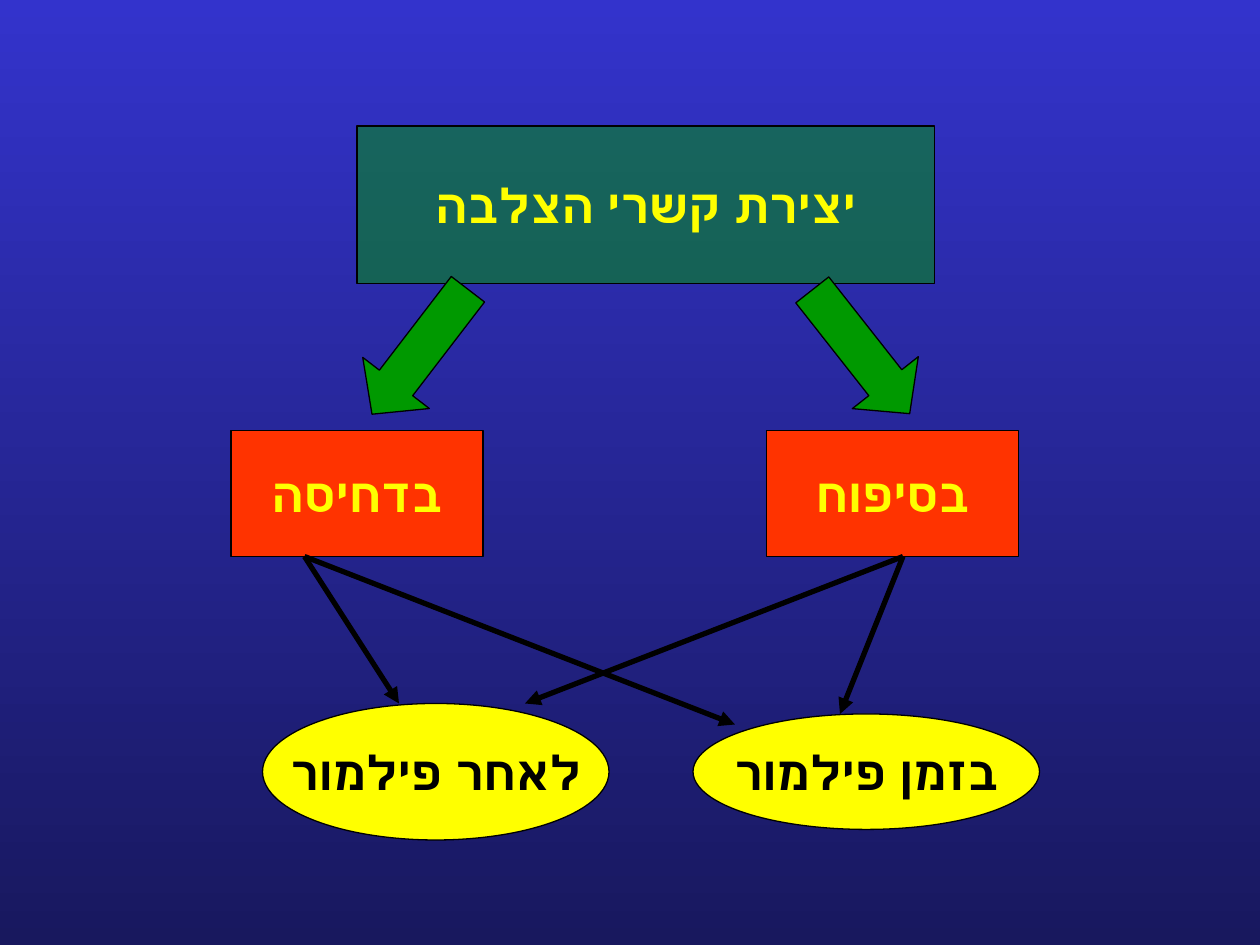
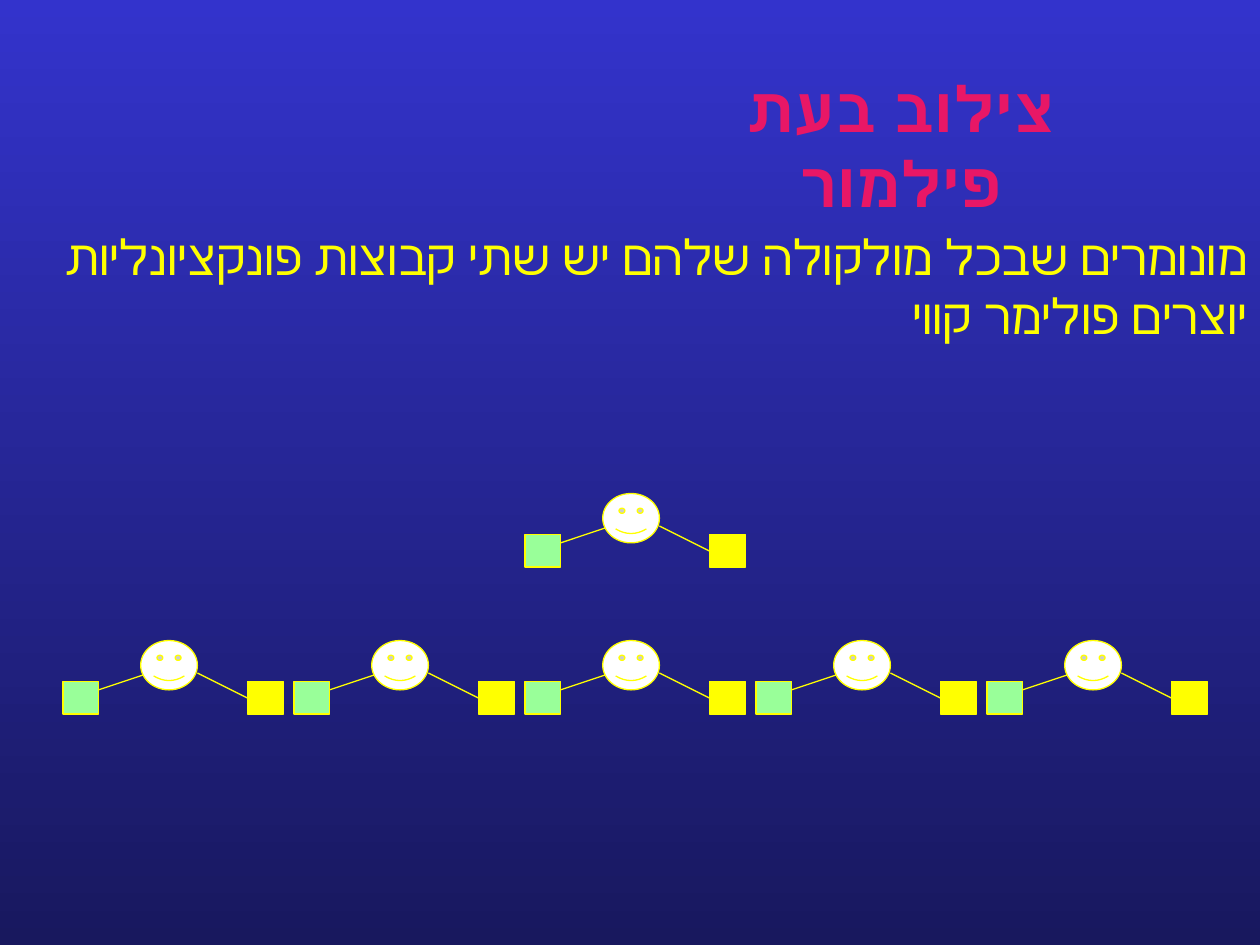
"""Build two slides on how cross-links form in polymers."""
from dataclasses import dataclass, field

from lxml.etree import SubElement
from pptx import Presentation
from pptx.dml.color import RGBColor
from pptx.enum.shapes import MSO_CONNECTOR, MSO_SHAPE
from pptx.enum.text import MSO_ANCHOR, PP_ALIGN
from pptx.oxml.ns import qn
from pptx.util import Pt

EMU_PER_PX = 7620


@dataclass(frozen=True)
class Theme:
    """Colours, type formats and line widths of the presentation."""

    sky: str = "3333CC"
    night: str = "18185E"
    black: str = "000000"
    white: str = "FFFFFF"
    yellow: str = "FFFF00"
    green: str = "009900"
    mint: str = "99FF99"
    red: str = "FF3300"
    pink: str = "E81766"
    thin: float = 0.75
    thick: float = 3
    label: dict = field(default_factory=lambda: {
        "name": "Times New Roman", "size": Pt(27), "bold": True})
    title: dict = field(default_factory=lambda: {
        "name": "Arial", "size": Pt(36), "bold": True})
    body: dict = field(default_factory=lambda: {
        "name": "Times New Roman", "size": Pt(28), "bold": False})


THEME = Theme()


def px(*lengths):
    """Turn px lengths into EMU."""
    return [length * EMU_PER_PX for length in lengths]


def add_slide(presentation):
    """Add a blank slide with the shared gradient background."""
    slide = presentation.slides.add_slide(presentation.slide_layouts[6])
    fill = slide.background.fill
    fill.gradient()
    fill.gradient_angle = 270
    for stop, color in zip(fill.gradient_stops, (THEME.sky, THEME.night)):
        stop.color.rgb = RGBColor.from_string(color)
    return slide


def write_text(shape, text, text_format, color, frame_format, alignment=PP_ALIGN.CENTER):
    """Write one right-to-left paragraph into a shape."""
    for name, value in frame_format.items():
        setattr(shape.text_frame, name, value)
    paragraph = shape.text_frame.paragraphs[0]
    paragraph.alignment = alignment
    paragraph._p.get_or_add_pPr().set("rtl", "1")
    run = paragraph.add_run()
    run.text = text
    for name, value in text_format.items():
        setattr(run.font, name, value)
    run.font.color.rgb = RGBColor.from_string(color)


def add_figure(shapes, preset, box, fill, outline):
    """Add a flat preset shape with a thin outline."""
    shape = shapes.add_shape(preset, *px(*box))
    shape.shadow.inherit = False
    shape.fill.solid()
    shape.fill.fore_color.rgb = RGBColor.from_string(fill)
    shape.line.color.rgb = RGBColor.from_string(outline)
    shape.line.width = Pt(THEME.thin)
    return shape


def add_node(slide, preset, box, text, fill, color):
    """Add a labelled diagram node."""
    shape = add_figure(slide.shapes, preset, box, fill, THEME.black)
    frame_format = {"word_wrap": False, "vertical_anchor": MSO_ANCHOR.MIDDLE}
    write_text(shape, text, THEME.label, color, frame_format)
    return shape


def add_block_arrow(slide, left, rotation):
    """Add a rotated green block arrow below the top node."""
    arrow = add_figure(slide.shapes, MSO_SHAPE.DOWN_ARROW, (left, 260, 80, 150),
                       THEME.green, THEME.black)
    arrow.adjustments[1] = 0.469
    arrow.rotation = rotation


def add_line(shapes, start, end, color, width, arrowhead=False):
    """Add a straight connector, with an arrowhead at its end if asked."""
    connector = shapes.add_connector(MSO_CONNECTOR.STRAIGHT, *px(*start, *end))
    connector.line.color.rgb = RGBColor.from_string(color)
    connector.line.width = Pt(width)
    if arrowhead:
        SubElement(connector.line._get_or_add_ln(), qn("a:tailEnd"), type="triangle")
    SubElement(connector._element.spPr, qn("a:effectLst"))


def add_text(slide, box, text, text_format, color, alignment):
    """Add a wrapping text box."""
    shape = slide.shapes.add_textbox(*px(*box))
    frame_format = {"word_wrap": True, "vertical_anchor": MSO_ANCHOR.TOP}
    write_text(shape, text, text_format, color, frame_format, alignment)


def add_monomer(slide, left, top):
    """Add a grouped monomer: a face joined to two functional groups."""
    shapes = slide.shapes.add_group_shape().shapes
    for start, end in (((128, 31), (176, 55)), ((34, 47), (82, 31))):
        add_line(shapes, (left + start[0], top + start[1]),
                 (left + end[0], top + end[1]), THEME.yellow, THEME.thin)
    for offset, fill in ((176, THEME.yellow), (0, THEME.mint)):
        add_figure(shapes, MSO_SHAPE.RECTANGLE, (left + offset, top + 39, 34, 31),
                   fill, THEME.yellow)
    add_figure(shapes, MSO_SHAPE.SMILEY_FACE, (left + 74, top, 54, 47),
               THEME.white, THEME.yellow)


def build_crosslink_diagram(presentation):
    """Build the diagram of the ways to form cross-links."""
    slide = add_slide(presentation)
    top_node = add_node(slide, MSO_SHAPE.RECTANGLE, (340, 120, 550, 150),
                        "יצירת קשרי הצלבה", THEME.green, THEME.yellow)
    fill_color = top_node._element.spPr.find(qn("a:solidFill"))[0]
    SubElement(fill_color, qn("a:alpha"), val="50000")
    for left, rotation in ((780, 321.8), (360, 37.5)):
        add_block_arrow(slide, left, rotation)
    for box, text in (((660, 680, 330, 110), "בזמן פילמור"),
                      ((250, 670, 330, 130), "לאחר פילמור")):
        add_node(slide, MSO_SHAPE.OVAL, box, text, THEME.yellow, THEME.black)
    for left, text in ((220, "בדחיסה"), (730, "בסיפוח")):
        add_node(slide, MSO_SHAPE.RECTANGLE, (left, 410, 240, 120), text,
                 THEME.red, THEME.yellow)
    targets = {290: ((700, 690), (380, 670)), 860: ((800, 680), (500, 670))}
    for start, ends in targets.items():
        for end in ends:
            add_line(slide.shapes, (start, 530), end, THEME.black, THEME.thick, True)


def build_linear_polymer(presentation):
    """Build the slide with a single monomer above a linear chain."""
    slide = add_slide(presentation)
    add_text(slide, (620, 60, 476, 70), "צילוב בעת פילמור",
             THEME.title, THEME.pink, PP_ALIGN.CENTER)
    add_text(slide, (0, 210, 1200, 124),
             "מונומרים שבכל מולקולה שלהם יש שתי קבוצות פונקציונליות יוצרים פולימר קווי",
             THEME.body, THEME.yellow, PP_ALIGN.RIGHT)
    add_monomer(slide, 500, 470)
    for index in range(5):
        add_monomer(slide, 60 + 220 * index, 610)


def main():
    """Build and save the presentation."""
    presentation = Presentation()
    presentation.slide_width, presentation.slide_height = px(1200, 900)
    build_crosslink_diagram(presentation)
    build_linear_polymer(presentation)
    presentation.save("out.pptx")


if __name__ == "__main__":
    main()
